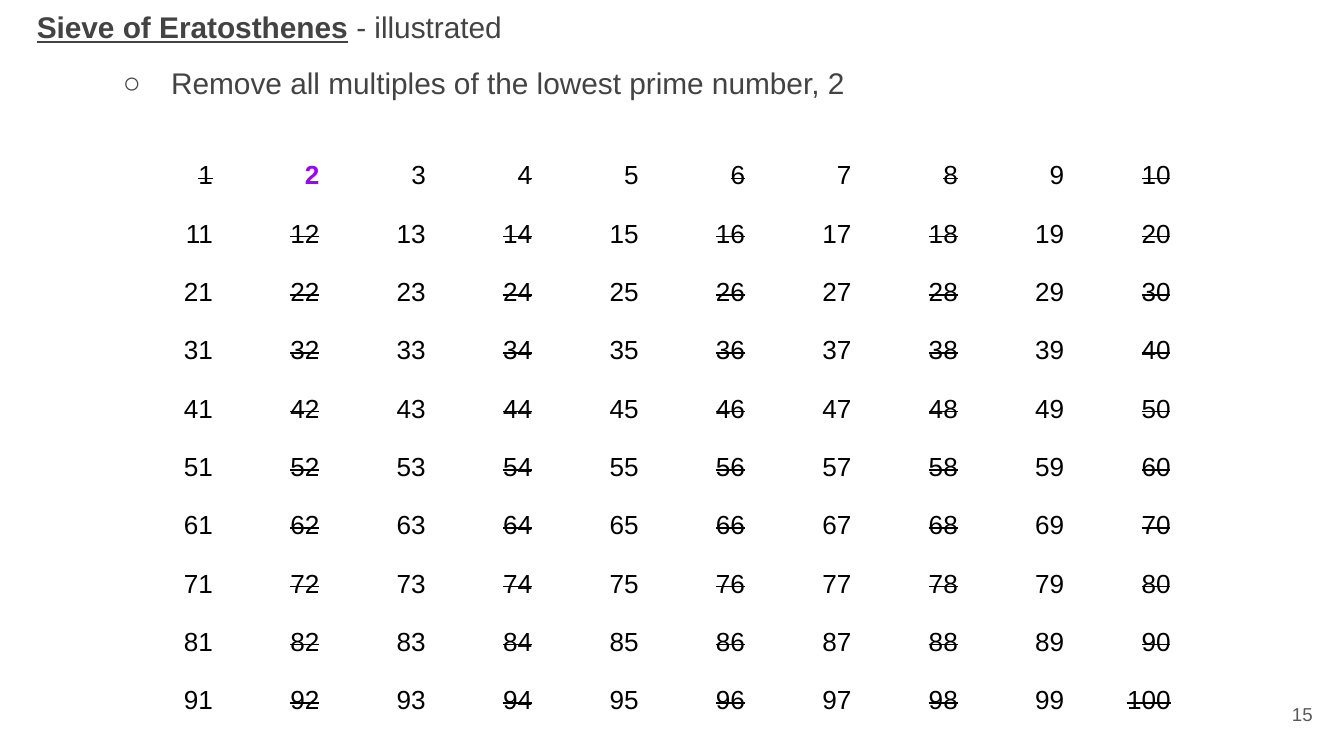
"""Build the slide that shows the first step of the sieve of Eratosthenes."""
from lxml import etree
from pptx import Presentation
from pptx.dml.color import RGBColor
from pptx.enum.text import MSO_ANCHOR, PP_ALIGN
from pptx.oxml.ns import qn
from pptx.util import Inches, Pt

RIGHT = PP_ALIGN.RIGHT
TOP, MIDDLE = MSO_ANCHOR.TOP, MSO_ANCHOR.MIDDLE
COLORS = {"heading": "434343", "number": "000000", "prime": "9900FF", "page": "595959"}
PLAIN_TABLE = "{2D5ABB26-0587-4C30-8999-92F81FD0307C}"
PRIME = 2
SIDE = 10


class SlideBuilder:
    """Hold the style and the current slide, with lengths in percent of the slide."""

    def __init__(self, presentation):
        self.font_name = "Arial"
        self.inset = Inches(0.1)
        self.column = presentation.slide_width / 100
        self.row = presentation.slide_height / 100
        self.slide = presentation.slides.add_slide(presentation.slide_layouts[6])

    def place(self, left, top, width, height):
        """Turn percentages into slide lengths."""
        return (round(left * self.column), round(top * self.row),
                round(width * self.column), round(height * self.row))

    def style(self, text, size, color):
        """Set the font of a paragraph or a run."""
        text.font.name = self.font_name
        text.font.size = Pt(size)
        text.font.color.rgb = RGBColor.from_string(COLORS[color])

    def inset_all(self, target):
        """Give a text frame or a cell equal margins."""
        target.margin_left = target.margin_right = self.inset
        target.margin_top = target.margin_bottom = self.inset

    def text_frame(self, box, anchor=TOP):
        """Add a wrapping text box and return its frame."""
        frame = self.slide.shapes.add_textbox(*self.place(*box)).text_frame
        frame.word_wrap = True
        frame.vertical_anchor = anchor
        self.inset_all(frame)
        return frame

    def heading(self, box, term, remark, step):
        """Write the underlined term, its remark and the bulleted step."""
        frame = self.text_frame(box)
        title, bullet = frame.paragraphs[0], frame.add_paragraph()
        term_run = title.add_run()
        term_run.text = term
        term_run.font.bold = term_run.font.underline = True
        title.add_run().text = remark
        bullet.add_run().text = step
        for paragraph in (title, bullet):
            self.style(paragraph, 16, "heading")
            paragraph.line_spacing = 1.15
            paragraph.space_before = Pt(8)
        bullet.level = 1
        bullet.space_after = Pt(8)
        self.add_bullet(bullet, "○", 1, -0.36)

    def add_bullet(self, paragraph, character, margin, indent):
        """Give a paragraph a hanging bullet in the heading colour."""
        properties = paragraph._p.get_or_add_pPr()
        properties.set("marL", str(Inches(margin)))
        properties.set("indent", str(Inches(indent)))
        color = etree.Element(qn("a:buClr"))
        etree.SubElement(color, qn("a:srgbClr"), val=COLORS["heading"])
        font = etree.Element(qn("a:buFont"), typeface=self.font_name)
        mark = etree.Element(qn("a:buChar"), char=character)
        default_font = properties.find(qn("a:defRPr"))
        for element in (color, font, mark):
            default_font.addprevious(element)

    def page_number(self, box, number):
        """Write the page number."""
        paragraph = self.text_frame(box, MIDDLE).paragraphs[0]
        paragraph.add_run().text = str(number)
        paragraph.alignment = RIGHT
        self.style(paragraph, 10, "page")

    def sieve(self, box):
        """Draw the number table with the removed numbers struck out."""
        table = self.slide.shapes.add_table(SIDE, SIDE, *self.place(*box)).table
        table.first_row = table.horz_banding = False
        table._tbl.tblPr.find(qn("a:tableStyleId")).text = PLAIN_TABLE
        for number, cell in enumerate(table.iter_cells(), start=1):
            self.number_cell(cell, number)

    def number_cell(self, cell, number):
        """Write one number, marked as prime, removed or still open."""
        cell.fill.background()
        self.inset_all(cell)
        paragraph = cell.text_frame.paragraphs[0]
        paragraph.alignment = RIGHT
        run = paragraph.add_run()
        run.text = str(number)
        self.style(run, 14, "prime" if number == PRIME else "number")
        if number == PRIME:
            run.font.bold = True
        elif number == 1 or number % PRIME == 0:
            run._r.get_or_add_rPr().set("strike", "sngStrike")


def main():
    """Build and save the slide."""
    presentation = Presentation()
    presentation.slide_width = Inches(10)
    presentation.slide_height = presentation.slide_width * 9 // 16
    builder = SlideBuilder(presentation)
    builder.page_number((92.65, 90.67, 6, 7.65), 15)
    builder.heading((1.75, -1.3, 96.9, 15.66), "Sieve of Eratosthenes", " - illustrated",
                    "Remove all multiples of the lowest prime number, 2")
    builder.sieve((8.93, 19.55, 79.2, 74.07))
    presentation.save("out.pptx")


if __name__ == "__main__":
    main()
